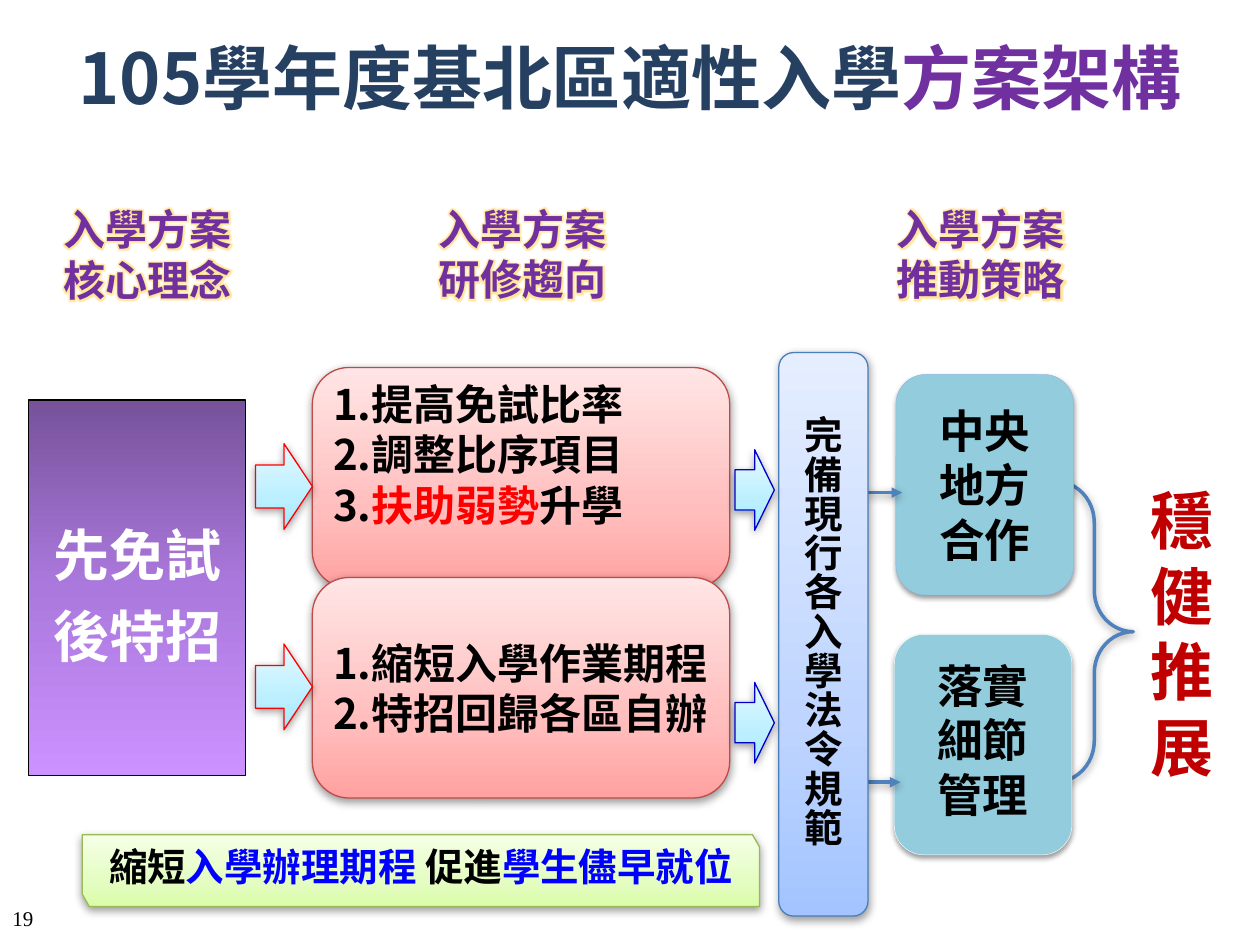
from lxml.etree import SubElement
from pptx import Presentation
from pptx.dml.color import RGBColor
from pptx.enum.shapes import MSO_CONNECTOR as CONNECTOR, MSO_SHAPE as SHAPE
from pptx.enum.text import MSO_ANCHOR as ANCHOR, PP_ALIGN as ALIGN
from pptx.oxml import parse_xml
from pptx.oxml.ns import nsdecls, qn
from pptx.util import Pt

FONT = "Noto Sans CJK SC"
BLACK, PURPLE, BLUE, RED = "000000", "7030A0", "0000FF", "FF0000"
STEEL = "4F81BD"
PINK_STOPS = [(0, "FFA2A1"), (35, "FFBEBD"), (100, "FFE5E5")]
BLUE_STOPS = [(0, "A3C4FF"), (35, "BFD5FF"), (100, "E5EEFF")]
CYAN_STOPS = [(0, "9EEAFF"), (35, "BBEFFF"), (100, "E4F9FF")]
GREEN_STOPS = [(0, "DAFDA7"), (35, "E4FDC2"), (100, "F5FFE6")]
VIOLET_STOPS = [(0, "76529A"), (50, "AB79DD"), (100, "CC91FF")]


def color(hex_value):
    return RGBColor.from_string(hex_value)


def points(*values):
    return [Pt(value) for value in values]


def add_shadow(shape, blur=5):
    properties = shape._element.spPr
    effects = properties.find(qn("a:effectLst"))
    if effects is None:
        effects = SubElement(properties, qn("a:effectLst"))
    effects.append(parse_xml(
        f'<a:outerShdw {nsdecls("a")} blurRad="{Pt(blur)}" dist="{Pt(1.6)}" dir="5400000" '
        'rotWithShape="0"><a:srgbClr val="000000"><a:alpha val="38000"/></a:srgbClr></a:outerShdw>'))


def paint(shape, fill, line, width=0.75, angle=90, blur=5):
    """Fill is a hex string, a list of gradient stops, or None; blur 0 means no shadow."""
    shape.shadow.inherit = False
    if fill is None:
        shape.fill.background()
    elif isinstance(fill, str):
        shape.fill.solid()
        shape.fill.fore_color.rgb = color(fill)
    else:
        shape.fill.gradient()
        shape.fill.gradient_angle = angle
        stops = shape._element.spPr.find(qn("a:gradFill")).find(qn("a:gsLst"))
        stops.clear()
        for position, value in fill:
            stop = SubElement(stops, qn("a:gs"), pos=str(position * 1000))
            SubElement(stop, qn("a:srgbClr"), val=value)
    shape.line.color.rgb = color(line)
    shape.line.width = Pt(width)
    if blur:
        add_shadow(shape, blur)


def write(shape, lines, size, hex_value=BLACK, align=ALIGN.CENTER, anchor=ANCHOR.MIDDLE,
          insets=(7.2, 3.6, 7.2, 3.6), spacing=None, hanging=0, wrap=True):
    """Each line is a string or a list of (text, colour) pairs."""
    frame = shape.text_frame
    frame.word_wrap = wrap
    frame.vertical_anchor = anchor
    frame.margin_left, frame.margin_top, frame.margin_right, frame.margin_bottom = points(*insets)
    for index, line in enumerate(lines):
        paragraph = frame.paragraphs[0] if index == 0 else frame.add_paragraph()
        paragraph.alignment = align
        if spacing:
            paragraph.line_spacing = spacing
        if hanging:
            properties = paragraph._p.get_or_add_pPr()
            properties.set("marL", str(Pt(hanging)))
            properties.set("indent", str(Pt(-hanging)))
        for text, value in [(line, hex_value)] if isinstance(line, str) else line:
            run = paragraph.add_run()
            run.text = text
            run.font.size = Pt(size)
            run.font.bold = True
            run.font.color.rgb = color(value)
            run.font.name = FONT
            SubElement(run._r.get_or_add_rPr(), qn("a:ea"), typeface=FONT)


def add_glow(shape):
    for paragraph in shape.text_frame.paragraphs:
        for run in paragraph.runs:
            run._r.rPr.find(qn("a:solidFill")).addnext(parse_xml(
                f'<a:effectLst {nsdecls("a")}><a:glow rad="{Pt(5)}"><a:srgbClr val="FFC000">'
                '<a:alpha val="40000"/></a:srgbClr></a:glow></a:effectLst>'))


def add_title(slide, box):
    title = slide.shapes.title
    title.left, title.top, title.width, title.height = points(*box)
    write(title, [[("105學年度基北區適性入學", "254061"), ("方案架構", PURPLE)]], 40)


def add_page_number(slide, box):
    number = slide.shapes.add_textbox(*points(*box))
    number.text_frame.text = "19"
    font = number.text_frame.paragraphs[0].runs[0].font
    font.size, font.name = Pt(12), "Times New Roman"
    font.color.rgb = color(BLACK)


def add_heading(slide, box, topic):
    heading = slide.shapes.add_textbox(*points(*box))
    write(heading, ["入學方案", topic], 24, PURPLE, anchor=ANCHOR.TOP)
    add_glow(heading)


def add_core_idea(slide, box):
    panel = slide.shapes.add_shape(SHAPE.RECTANGLE, *points(*box))
    paint(panel, VIOLET_STOPS, BLACK, angle=270, blur=0)
    write(panel, ["先免試", "後特招"], 32, "FFFFFF", spacing=1.2, wrap=False)


def add_trends(slide, box):
    left, top, width, height = box
    card_height = 126
    cards = [
        (top, ANCHOR.TOP, ["1.提高免試比率", "2.調整比序項目",
                           [("3.", BLACK), ("扶助弱勢", RED), ("升學", BLACK)]]),
        (top + height - card_height, ANCHOR.MIDDLE, ["1.縮短入學作業期程", "2.特招回歸各區自辦"]),
    ]
    for card_top, anchor, lines in cards:
        card = slide.shapes.add_shape(SHAPE.ROUNDED_RECTANGLE,
                                      *points(left, card_top, width, card_height))
        paint(card, PINK_STOPS, "BE4B48")
        write(card, lines, 24, align=ALIGN.LEFT, anchor=anchor,
              insets=(5.8, 0, 5.8, 0), hanging=21.5)


def add_flow_arrows(slide, box, arrow_height, line):
    """One block arrow at the top of the box and one at its bottom."""
    left, top, width, height = box
    for arrow_top in (top, top + height - arrow_height):
        arrow = slide.shapes.add_shape(SHAPE.RIGHT_ARROW,
                                       *points(left, arrow_top, width, arrow_height))
        paint(arrow, CYAN_STOPS, line)


def add_regulations(slide, box):
    bar = slide.shapes.add_shape(SHAPE.FLOWCHART_ALTERNATE_PROCESS, *points(*box))
    paint(bar, BLUE_STOPS, "4A7EBB")
    write(bar, ["完備現行各入學法令規範"], 22, spacing=0.85)


def add_strategies(slide, box):
    left, top, width, height = box
    # Brace and the goal it points to
    brace = slide.shapes.add_shape(SHAPE.RIGHT_BRACE, *points(left + 92, top + 61, 44.6, 172))
    brace.adjustments[0] = 0.53
    paint(brace, None, STEEL, width=2)
    goal = slide.shapes.add_textbox(*points(left + width - 57, top + 33, 55, 229))
    write(goal, ["穩健推展"], 36, "C00000", insets=(0, 0, 0, 0))
    # Strategy cards, each entered by an arrow
    card_height = 126
    cards = [
        (left + 1, top, 67.5, "8EB4E3", 0, ["中央", "地方", "合作"]),
        (left, top + height - card_height, 84.5, "FFFFFF", 5.8, ["落實", "細節", "管理"]),
    ]
    for card_left, card_top, arrow_offset, line, bottom_inset, lines in cards:
        card = slide.shapes.add_shape(SHAPE.ROUNDED_RECTANGLE,
                                      *points(card_left, card_top, 101.5, card_height))
        paint(card, "93CDDD", line, width=0.25, blur=3.1)
        write(card, lines, 26, insets=(0, 0, 0, bottom_inset))
        arrow_y = card_top + arrow_offset
        arrow = slide.shapes.add_connector(
            CONNECTOR.STRAIGHT, *points(left - 16, arrow_y, card_left + 3.5, arrow_y))
        arrow.line.color.rgb = color(STEEL)
        arrow.line.width = Pt(2)
        SubElement(arrow.line._get_or_add_ln(), qn("a:tailEnd"), type="triangle")
        add_shadow(arrow)


def add_banner(slide, box):
    left, top, width, height = box
    right, bottom = left + width, top + height
    cut_x, cut_y = 4.3, 6.7
    builder = slide.shapes.build_freeform(left, top, scale=Pt(1))
    builder.add_line_segments([(right - cut_x, top), (right, top + cut_y), (right, bottom),
                               (left + cut_x, bottom), (left, bottom - cut_y)], close=True)
    banner = builder.convert_to_shape()
    paint(banner, GREEN_STOPS, "98B954")
    write(banner, [[("縮短", BLACK), ("入學辦理期程", BLUE), (" 促進", BLACK),
                    ("學生儘早就位", BLUE)]], 22, spacing=0.8)


def main():
    presentation = Presentation()
    presentation.slide_width, presentation.slide_height = points(720, 540)
    slide = presentation.slides.add_slide(presentation.slide_layouts[5])
    add_title(slide, (0, 1.5, 720, 84))
    add_page_number(slide, (0, 514, 45, 18))
    add_trends(slide, (178.5, 210, 238.5, 246))
    add_strategies(slide, (511, 214, 194, 274.5))
    add_regulations(slide, (445, 201.5, 51, 322))
    add_heading(slide, (16.5, 113, 136, 77), "核心理念")
    add_heading(slide, (230.5, 112.5, 136, 77), "研修趨向")
    add_heading(slide, (502, 112.5, 117, 77), "推動策略")
    add_flow_arrows(slide, (146, 253.5, 32.5, 163.5), 49, RED)
    add_flow_arrows(slide, (420, 257, 22.5, 179), 46, "0000CC")
    add_banner(slide, (46.8, 477.4, 387.4, 40.3))
    add_core_idea(slide, (16.5, 228.5, 124, 214.5))
    presentation.save("out.pptx")


if __name__ == "__main__":
    main()
